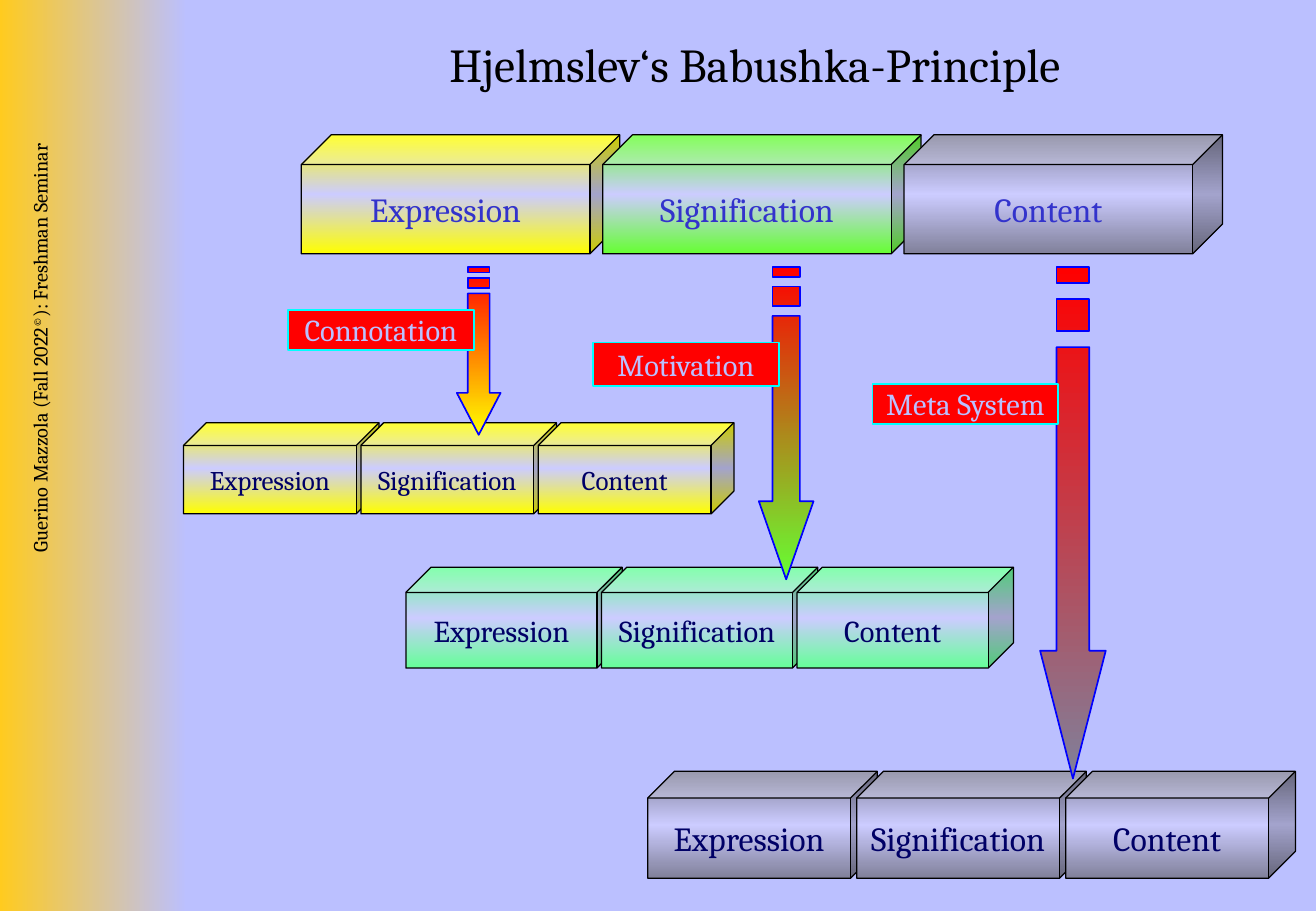
"""Build the slide on Hjelmslev's Babushka-Principle."""
from copy import deepcopy

from pptx import Presentation
from pptx import util as u
from pptx.dml.color import RGBColor
from pptx.enum import shapes, text
from pptx.oxml.ns import qn

rgb = RGBColor.from_string


def paint(part, colors, line=None, weight=1, angle=270):
    part.shadow.inherit = False
    if len(colors) == 1:
        part.fill.solid()
        part.fill.fore_color.rgb = rgb(colors[0])
    else:
        part.fill.gradient()
        part.fill.gradient_angle = angle
        stops = part.element.spPr.find(".//" + qn("a:gsLst"))
        for _ in colors[2:]:
            stops.append(deepcopy(stops[0]))
        for i, (stop, color) in enumerate(zip(part.fill.gradient_stops, colors)):
            stop.color.rgb = rgb(color)
            stop.position = i / (len(colors) - 1)
    if line:
        part.line.color.rgb = rgb(line)
        part.line.width = u.Pt(weight)
    else:
        part.line.fill.background()


def write(part, runs, size, color, align="CENTER", wrap=False, anchor="MIDDLE"):
    frame = part.text_frame
    frame.word_wrap = wrap
    frame.vertical_anchor = text.MSO_ANCHOR[anchor]
    paragraph = frame.paragraphs[0]
    paragraph.alignment = text.PP_ALIGN[align]
    for words in runs:
        run = paragraph.add_run()
        run.text = words
        for name, value in {"name": "Cambria", "size": u.Pt(size)}.items():
            setattr(run.font, name, value)
        run.font.color.rgb = rgb(color)
    return paragraph


deck = Presentation()
deck.slide_width, deck.slide_height = u.Inches(10.83), u.Inches(7.5)
slide = deck.slides.add_slide(deck.slide_layouts[6])
slide.background.fill.solid()
slide.background.fill.fore_color.rgb = rgb("BBC0FF")
kinds = shapes.MSO_SHAPE

sidebar = slide.shapes.add_shape(kinds.RECTANGLE, 0, 0, u.Inches(1.54), u.Inches(7.5))
paint(sidebar, ["FFCB1F", "BBC0FF"], angle=0)

credit = slide.shapes.add_textbox(u.Inches(-2.4), u.Inches(3.66), u.Inches(5.65), u.Inches(0.5))
credit.rotation = 270
credit_line = write(credit, ["Guerino Mazzola (Fall 2022", "©", "): Freshman Seminar"],
                    12, "000000", "RIGHT", True, "TOP")
credit_line.runs[1].font.element.set("baseline", "30000") if hasattr(
    credit_line.runs[1].font, "element") else credit_line.runs[1]._r.get_or_add_rPr().set("baseline", "30000")

GREY, YELLOW, LIME, MINT = "80809A", "FFFF00", "66FF33", "66FF99"
NAVY, BLUE = "000066", "3333CC"
rows = [
    (5.33, 6.35, 1.72, 1.89, 0.88, [GREY] * 3, 20, NAVY),
    (2.48, 1.11, 2.48, 2.62, 0.98, [YELLOW, LIME, GREY], 20, BLUE),
    (3.34, 4.67, 1.61, 1.78, 0.83, [MINT] * 3, 18, NAVY),
    (1.51, 3.48, 1.46, 1.61, 0.75, [YELLOW] * 3, 16, NAVY),
]
for left, top, pitch, width, height, colors, size, ink in rows:
    for i, role in enumerate(["Expression", "Signification", "Content"]):
        block = slide.shapes.add_shape(kinds.CUBE, u.Inches(left + i * pitch), u.Inches(top),
                                       u.Inches(width), u.Inches(height))
        paint(block, [colors[i], "CCCCFF", colors[i]], "000000", 0.75)
        write(block, [role], size, ink)

ARROW_TOP = 2.2
relations = [
    ("Meta System", 7.18, 3.16, 0.33, 8.83, 0.54, 4.21, GREY),
    ("Motivation", 4.88, 2.82, 0.36, 6.47, 0.45, 2.57, LIME),
    ("Connotation", 2.37, 2.55, 0.33, 3.94, 0.36, 1.38, YELLOW),
]
for relation, left, top, height, center, head, length, color in relations:
    half, shaft = head / 2, head / 4
    step = length / 32
    outlines = [
        [(half, 24), (shaft, 24), (shaft, 5), (-shaft, 5), (-shaft, 24), (-half, 24), (0, 32)],
        [(shaft, 2), (-shaft, 2), (-shaft, 4), (shaft, 4)],
        [(shaft, 0), (-shaft, 0), (-shaft, 1), (shaft, 1)],
    ]
    contours = [[(u.Inches(center + x), u.Inches(ARROW_TOP + y * step)) for x, y in outline]
                for outline in outlines]
    builder = slide.shapes.build_freeform(*contours[0][0])
    builder.add_line_segments(contours[0][1:])
    for stripe in contours[1:]:
        builder.move_to(*stripe[0])
        builder.add_line_segments(stripe[1:])
    paint(builder.convert_to_shape(), ["FF0000", color], "0000FF")

    label = slide.shapes.add_shape(kinds.RECTANGLE, u.Inches(left), u.Inches(top),
                                   u.Inches(1.53), u.Inches(height))
    paint(label, ["FF0000"], "00FFFF")
    write(label, [relation], 18, "BBC0FF")

title = slide.shapes.add_textbox(u.Inches(3.6), u.Inches(0.24), u.Inches(5.24), u.Inches(0.57))
write(title, ["Hjelmslev‘s Babushka-Principle"], 28, "000000", "LEFT", anchor="TOP")

deck.save("out.pptx")
